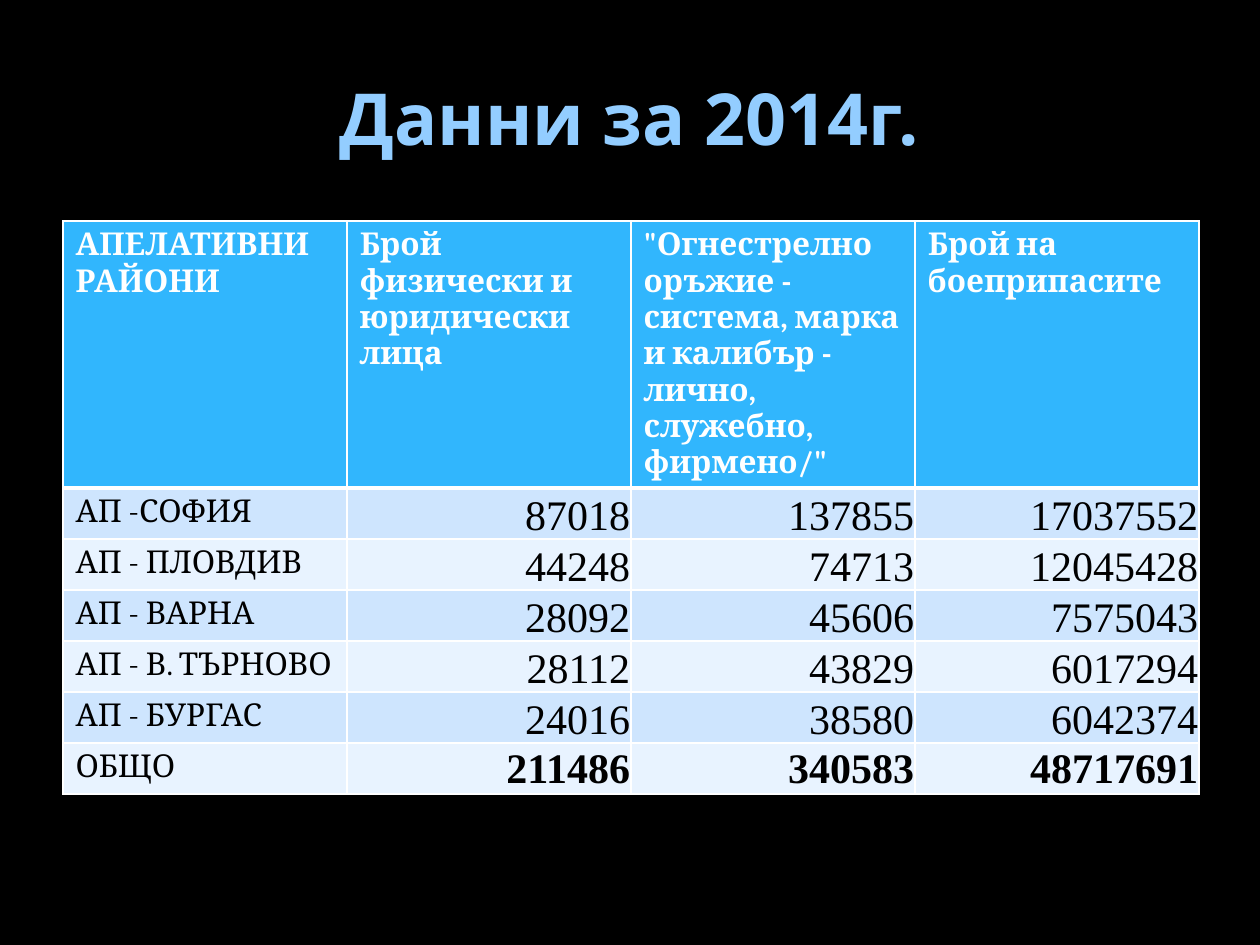
from lxml.etree import SubElement
from pptx import Presentation
from pptx.dml.color import RGBColor
from pptx.enum.text import MSO_ANCHOR as Anchor, PP_ALIGN as Align
from pptx.oxml.ns import qn
from pptx.util import Pt

PX = 914400 / 126
BLACK = RGBColor(0x00, 0x00, 0x00)
WHITE = RGBColor(0xFF, 0xFF, 0xFF)
TITLE_BLUE = RGBColor(0x93, 0xCD, 0xFF)
HEADER_BLUE = RGBColor(0x31, 0xB6, 0xFD)
BANDS = RGBColor(0xE8, 0xF3, 0xFF), RGBColor(0xCE, 0xE5, 0xFE)

HEADER_HEIGHT, ROW_HEIGHT, COLUMN_WIDTH = 266, 51, 284
LABEL_FONT = dict(name="Cambria", size=Pt(18), bold=False)
HEADER_FONT = dict(LABEL_FONT, bold=True)
NUMBER_FONT = dict(name="Times New Roman", size=Pt(24), bold=False)
TOTAL_FONT = dict(NUMBER_FONT, bold=True)

HEADER = [
    "АПЕЛАТИВНИ РАЙОНИ",
    "Брой физически и юридически лица",
    '"Огнестрелно оръжие - система, марка и калибър - лично, служебно, фирмено/"',
    "Брой на боеприпасите",
]
DISTRICTS = [
    ("АП -СОФИЯ", 87018, 137855, 17037552),
    ("АП - ПЛОВДИВ", 44248, 74713, 12045428),
    ("АП - ВАРНА", 28092, 45606, 7575043),
    ("АП - В. ТЪРНОВО", 28112, 43829, 6017294),
    ("АП - БУРГАС", 24016, 38580, 6042374),
]
TOTAL = ("ОБЩО", 211486, 340583, 48717691)


def px(n):
    return round(n * PX)


def set_attrs(obj, values):
    for name, value in values.items():
        setattr(obj, name, value)


def write(tf, text, font, color, align):
    p = tf.paragraphs[0]
    p.alignment = align
    r = p.add_run()
    r.text = text
    set_attrs(r.font, font)
    r.font.color.rgb = color


def add_title(s, text):
    title = s.shapes.title
    set_attrs(title, dict(left=px(63), top=px(38), width=px(1134), height=px(157)))
    tf = title.text_frame
    tf.vertical_anchor = Anchor.MIDDLE
    font = dict(name="Open Sans", size=Pt(41), bold=True)
    write(tf, text, font, TITLE_BLUE, Align.CENTER)


def set_borders(cell, top, bottom):
    """Draw white borders; widths in points. Call before filling the cell."""
    tc_pr = cell._tc.get_or_add_tcPr()
    for side, width in dict(L=1, R=1, T=top, B=bottom).items():
        ln = SubElement(tc_pr, qn(f"a:ln{side}"), w=str(Pt(width)))
        fill = SubElement(ln, qn("a:solidFill"))
        SubElement(fill, qn("a:srgbClr"), val=str(WHITE))


def format_cell(cell, text, fill, font, color=BLACK, align=Align.LEFT, top=1, bottom=1):
    set_borders(cell, top, bottom)
    cell.fill.solid()
    cell.fill.fore_color.rgb = fill
    write(cell.text_frame, text, font, color, align)


def format_number(cell, value, fill, font, anchor, top):
    format_cell(cell, str(value), fill, font, align=Align.RIGHT, top=top)
    set_attrs(cell, dict(margin_left=px(1), margin_right=px(1), margin_top=px(1),
                         margin_bottom=0, vertical_anchor=anchor))


def add_data_table(s):
    rows = DISTRICTS + [TOTAL]
    height = HEADER_HEIGHT + ROW_HEIGHT * len(rows)
    table = s.shapes.add_table(len(rows) + 1, len(HEADER), px(63), px(221),
                               px(COLUMN_WIDTH * len(HEADER)), px(height)).table
    for column in table.columns:
        column.width = px(COLUMN_WIDTH)
    for i, row in enumerate(table.rows):
        row.height = px(ROW_HEIGHT if i else HEADER_HEIGHT)

    for j, text in enumerate(HEADER):
        format_cell(table.cell(0, j), text, HEADER_BLUE, HEADER_FONT, WHITE, bottom=3)
    for i, (label, *numbers) in enumerate(rows, 1):
        fill = BANDS[i % 2]
        top = 3 if i == 1 else 1
        is_total = i == len(rows)
        font = TOTAL_FONT if is_total else NUMBER_FONT
        anchor = Anchor.MIDDLE if is_total else Anchor.BOTTOM
        format_cell(table.cell(i, 0), label, fill, LABEL_FONT, top=top)
        for j, value in enumerate(numbers, 1):
            format_number(table.cell(i, j), value, fill, font, anchor, top)


def main():
    prs = Presentation()
    prs.slide_width, prs.slide_height = px(1260), px(945)
    s = prs.slides.add_slide(prs.slide_layouts[5])
    s.background.fill.solid()
    s.background.fill.fore_color.rgb = BLACK
    add_title(s, "Данни за 2014г.")
    add_data_table(s)
    prs.save("out.pptx")


if __name__ == "__main__":
    main()
